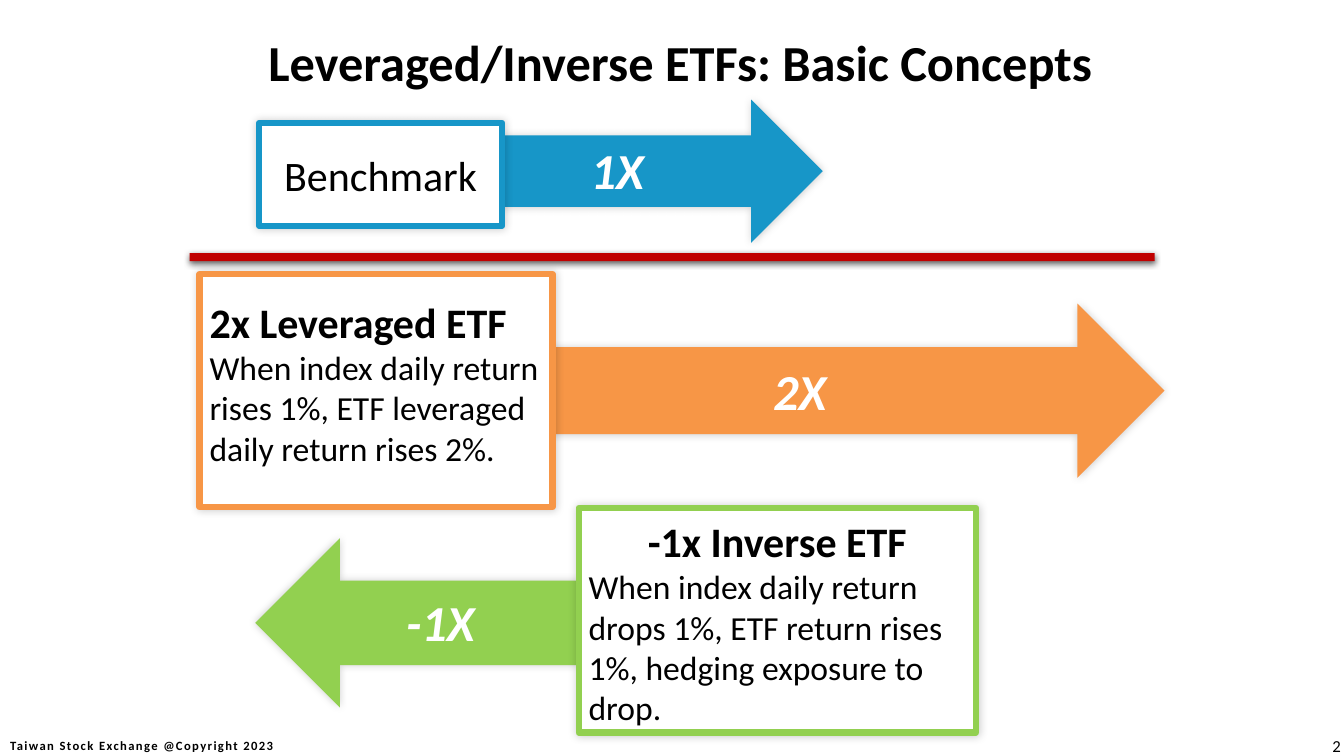
from dataclasses import dataclass
from typing import Any, Optional

import pptx
import pptx.dml.color
import pptx.enum.shapes
import pptx.enum.text
import pptx.oxml
import pptx.oxml.ns
import pptx.util
from lxml import etree

Cm = pptx.util.Cm
Pt = pptx.util.Pt
RGBColor = pptx.dml.color.RGBColor
Kind = pptx.enum.shapes.MSO_SHAPE
Align = pptx.enum.text.PP_ALIGN
Anchor = pptx.enum.text.MSO_ANCHOR

BLACK = RGBColor(0x00, 0x00, 0x00)
WHITE = RGBColor(0xFF, 0xFF, 0xFF)
RED = RGBColor(0xC0, 0x00, 0x00)
BLUE = RGBColor(0x17, 0x96, 0xC8)
ORANGE = RGBColor(0xF7, 0x96, 0x46)
GREEN = RGBColor(0x92, 0xD0, 0x50)
FONT = "Calibri"


@dataclass(frozen=True)
class Area:
    left: float
    top: float
    width: float
    height: float

    def lengths(self) -> tuple:
        return Cm(self.left), Cm(self.top), Cm(self.width), Cm(self.height)


@dataclass(frozen=True)
class Line:
    text: str
    size: float
    bold: bool = False
    italic: bool = False
    color: RGBColor = BLACK
    align: Any = Align.LEFT
    track: int = 0


@dataclass(frozen=True)
class Glow:
    alpha: int
    blur: float
    dist: float
    angle: int


@dataclass(frozen=True)
class Fund:
    color: RGBColor
    arrow: Area
    turn: int
    ratio: str
    label: Area
    box: Area
    lines: tuple
    inset: Optional[float] = None


SOFT = Glow(20, 6, 0, 225)
HARD = Glow(63, 4.5, 1.5, 90)

FUNDS = (
    Fund(ORANGE, Area(13.74, 7.65, 15.6, 4.39), 0, "2X",
         Area(19.23, 8.94, 2.39, 1.8), Area(5.03, 6.91, 8.89, 5.87),
         (Line("2x Leveraged ETF", 30, bold=True),
          Line("When index daily return rises 1%, ETF leveraged "
               "daily return rises 2%.", 24)), 0.56),
    Fund(GREEN, Area(6.43, 13.56, 8.15, 4.27), 180, "-1X",
         Area(9.98, 14.76, 2.44, 1.91), Area(14.58, 12.8, 10.01, 5.66),
         (Line("-1x Inverse ETF", 30, bold=True, align=Align.CENTER),
          Line("When index daily return drops 1%, ETF return rises 1%, "
               "hedging exposure to drop.", 24)), 0.2),
    Fund(BLUE, Area(12.42, 2.51, 8.31, 3.61), 0, "1X",
         Area(14.63, 3.38, 2.62, 1.8), Area(6.53, 3.1, 6.12, 2.59),
         (Line("Benchmark", 30, align=Align.CENTER),)),
)


def cast(shape: Any, glow: Glow) -> None:
    shape.shadow.inherit = False
    props = shape._element.spPr
    effects = props.find(pptx.oxml.ns.qn("a:effectLst"))
    outer = etree.SubElement(
        effects, pptx.oxml.ns.qn("a:outerShdw"),
        blurRad=str(Pt(glow.blur)), dist=str(Pt(glow.dist)),
        dir=str(glow.angle * 60000), algn="ctr", rotWithShape="0")
    tint = etree.SubElement(outer, pptx.oxml.ns.qn("a:srgbClr"), val=str(BLACK))
    etree.SubElement(tint, pptx.oxml.ns.qn("a:alpha"),
                     val=str(glow.alpha * 1000))


def draw(shapes: Any, kind: Any, area: Area, fill: RGBColor,
         glow: Glow, edge: Optional[RGBColor] = None) -> Any:
    shape = shapes.add_shape(kind, *area.lengths())
    shape.fill.solid()
    shape.fill.fore_color.rgb = fill
    if edge is None:
        shape.line.fill.background()
    else:
        shape.line.color.rgb = edge
        shape.line.width = Pt(4.5)
    cast(shape, glow)
    return shape


def write(shape: Any, lines: tuple, anchor: Any, wrap: bool = True) -> None:
    frame = shape.text_frame
    frame.word_wrap = wrap
    frame.vertical_anchor = anchor
    frame.text = "\n".join(line.text for line in lines)
    for para, line in zip(frame.paragraphs, lines):
        para.alignment = line.align
        for run in para.runs:
            font = run.font
            font.name = FONT
            font.size = Pt(line.size)
            font.bold = line.bold
            font.italic = line.italic
            font.color.rgb = line.color
            if line.track:
                run._r.get_or_add_rPr().set("spc", str(line.track))


def note(shapes: Any, area: Area, line: Line) -> None:
    box = shapes.add_textbox(*area.lengths())
    frame = box.text_frame
    frame.margin_left = frame.margin_right = Cm(0)
    frame.margin_top = frame.margin_bottom = Cm(0)
    write(box, (line,), Anchor.MIDDLE, wrap=False)


def show(shapes: Any, fund: Fund) -> None:
    group = shapes.add_group_shape().shapes
    arrow = draw(group, Kind.RIGHT_ARROW, fund.arrow, fund.color, SOFT)
    arrow.rotation = fund.turn
    box = draw(group, Kind.RECTANGLE, fund.box, WHITE, SOFT, fund.color)
    if fund.inset is None:
        write(box, fund.lines, Anchor.MIDDLE)
    else:
        box.text_frame.margin_top = Cm(fund.inset)
        write(box, fund.lines, Anchor.TOP)
    label = group.add_textbox(*fund.label.lengths())
    ratio = Line(fund.ratio, 36, bold=True, italic=True, color=WHITE)
    write(label, (ratio,), Anchor.TOP)


def main() -> None:
    deck = pptx.Presentation()
    deck.slide_width = Cm(33.86)
    deck.slide_height = Cm(19.05)
    shapes = deck.slides.add_slide(deck.slide_layouts[6]).shapes
    note(shapes, Area(0, 18.54, 7.14, 0.51),
         Line("Taiwan Stock Exchange @Copyright 2023", 9, bold=True,
              align=Align.CENTER, track=100))
    draw(shapes, Kind.RECTANGLE, Area(4.78, 6.38, 24.31, 0.2), RED, HARD)
    for fund in FUNDS:
        show(shapes, fund)
    title = shapes.add_textbox(*Area(5.74, 0.53, 22.81, 2.01).lengths())
    write(title, (Line("Leveraged/Inverse ETFs: Basic Concepts", 36,
                       bold=True, align=Align.CENTER),), Anchor.MIDDLE)
    note(shapes, Area(32.54, 18.54, 1.24, 0.51),
         Line("2", 12, align=Align.RIGHT, track=100))
    deck.save("out.pptx")


if __name__ == "__main__":
    main()
